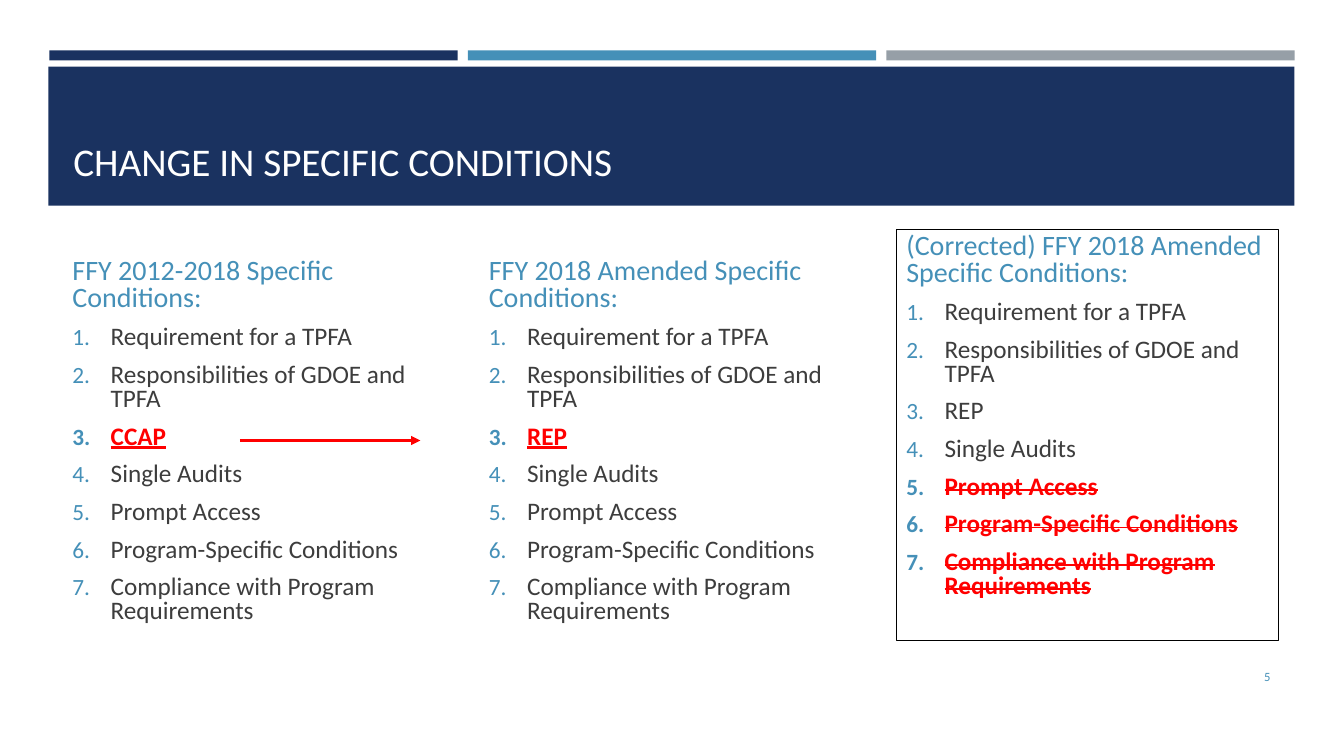
"""Build the slide that compares three lists of specific conditions."""
from dataclasses import dataclass

from lxml import etree
from pptx import Presentation, util as u
from pptx.dml.color import RGBColor
from pptx.enum import shapes, text
from pptx.oxml import ns


@dataclass(frozen=True)
class Theme:
    """Colours, font and type sizes."""
    navy: str = "1A3260"
    blue: str = "4590B8"
    gray: str = "969FA7"
    white: str = "FFFFFF"
    body: str = "3D3D3D"
    red: str = "FF0000"
    black: str = "000000"
    font: str = "Calibri"
    title_size: int = 28
    heading_size: int = 20
    item_size: int = 18
    number_size: int = 9


def add_xml(parent, tag, **attributes):
    """Append a DrawingML element."""
    return etree.SubElement(parent, ns.qn(tag), attributes)


def write(para, words, *, theme, size, color, bold=None, underline=None, strike=False):
    """Add a formatted span to a paragraph."""
    span = para.add_run()
    span.text = words
    font = span.font
    font.name, font.size = theme.font, u.Pt(size)
    font.bold, font.underline = bold, underline
    font.color.rgb = RGBColor.from_string(color)
    if strike:
        span._r.get_or_add_rPr().set("strike", "sngStrike")


class Page:
    """A slide with its style and element builders."""

    def __init__(self, slide, theme):
        self.slide, self.theme = slide, theme

    def bar(self, left, top, width, height, color):
        """Draw a filled rectangle without outline."""
        box = self.slide.shapes.add_shape(
            shapes.MSO_SHAPE.RECTANGLE, *map(u.Inches, (left, top, width, height)))
        box.shadow.inherit = False
        box.fill.solid()
        box.fill.fore_color.rgb = RGBColor.from_string(color)
        box.line.fill.background()

    def text_box(self, left, top, width, height, anchor=text.MSO_ANCHOR.TOP):
        """Add an empty wrapping text box."""
        box = self.slide.shapes.add_textbox(*map(u.Inches, (left, top, width, height)))
        box.text_frame.word_wrap = True
        box.text_frame.vertical_anchor = anchor
        return box

    def label(self, words, place, size, color, anchor, align=text.PP_ALIGN.LEFT):
        """Add one line of text."""
        para = self.text_box(*place, anchor).text_frame.paragraphs[0]
        para.alignment = align
        write(para, words, theme=self.theme, size=size, color=color)

    def space(self, para, size):
        """Set tight lines and gaps in proportion to the type size."""
        para.line_spacing = 0.8
        para.space_before, para.space_after = u.Pt(size * 0.2), u.Pt(6)

    def number(self, para):
        """Number a paragraph with a hanging indent."""
        indent = u.Inches(0.38)
        properties = para._p.get_or_add_pPr()
        properties.set("marL", str(indent))
        properties.set("indent", str(-indent))
        add_xml(add_xml(properties, "a:buClr"), "a:srgbClr", val=self.theme.blue)
        add_xml(properties, "a:buSzPct", val="92000")
        add_xml(properties, "a:buFont", typeface="+mj-lt")
        add_xml(properties, "a:buAutoNum", type="arabicPeriod")

    def conditions(self, heading, items, place, changed, outlined=False, **emphasis):
        """Add a heading and its numbered list, marking the changed items."""
        theme = self.theme
        box = self.text_box(*place)
        if outlined:
            box.line.color.rgb = RGBColor.from_string(theme.black)
            box.line.width = u.Pt(0.25)
        para = box.text_frame.paragraphs[0]
        self.space(para, theme.heading_size)
        write(para, heading, theme=theme, size=theme.heading_size, color=theme.blue)
        for item in items:
            para = box.text_frame.add_paragraph()
            self.space(para, theme.item_size)
            self.number(para)
            style = {"color": theme.body}
            if item in changed:
                style = {"color": theme.red, "bold": True, **emphasis}
            write(para, item, theme=theme, size=theme.item_size, **style)

    def arrow(self, left, right, top, color):
        """Draw a horizontal arrow pointing right."""
        line = self.slide.shapes.add_connector(
            shapes.MSO_CONNECTOR.STRAIGHT, *map(u.Inches, (left, top, right, top)))
        line.line.color.rgb = RGBColor.from_string(color)
        line.line.width = u.Pt(2.25)
        add_xml(line.line._get_or_add_ln(), "a:tailEnd", type="triangle")
        add_xml(line._element.spPr, "a:effectLst")


def main():
    """Build and save the deck."""
    deck = Presentation()
    deck.slide_width, deck.slide_height = u.Inches(13.33), u.Inches(7.5)
    theme = Theme()
    page = Page(deck.slides.add_slide(deck.slide_layouts[6]), theme)

    for column, color in enumerate((theme.navy, theme.blue, theme.gray)):
        page.bar(0.49 + 4.15 * column, 0.5, 4.05, 0.1, color)
    page.bar(0.48, 0.66, 12.36, 1.38, theme.navy)
    page.label("CHANGE IN SPECIFIC CONDITIONS", (0.63, 0.8, 12.06, 1.08),
               theme.title_size, theme.white, text.MSO_ANCHOR.BOTTOM)
    page.label("5", (11.55, 6.51, 1.15, 0.4), theme.number_size, theme.blue,
               text.MSO_ANCHOR.MIDDLE, text.PP_ALIGN.RIGHT)

    first = ["Requirement for a TPFA", "Responsibilities of GDOE and TPFA"]
    last = ["Prompt Access", "Program-Specific Conditions",
            "Compliance with Program Requirements"]
    before = [*first, "CCAP", "Single Audits", *last]
    after = [*first, "REP", "Single Audits", *last]
    page.conditions("FFY 2012-2018 Specific Conditions:", before,
                    (0.62, 2.52, 3.6, 3.83), ["CCAP"], underline=True)
    page.conditions("FFY 2018 Amended Specific Conditions:", after,
                    (4.75, 2.52, 3.6, 3.83), ["REP"], underline=True)
    page.conditions("(Corrected) FFY 2018 Amended Specific Conditions:", after,
                    (8.89, 2.27, 3.79, 4.08), last, outlined=True, strike=True)
    page.arrow(2.38, 4.17, 4.37, theme.red)
    deck.save("out.pptx")


if __name__ == "__main__":
    main()
